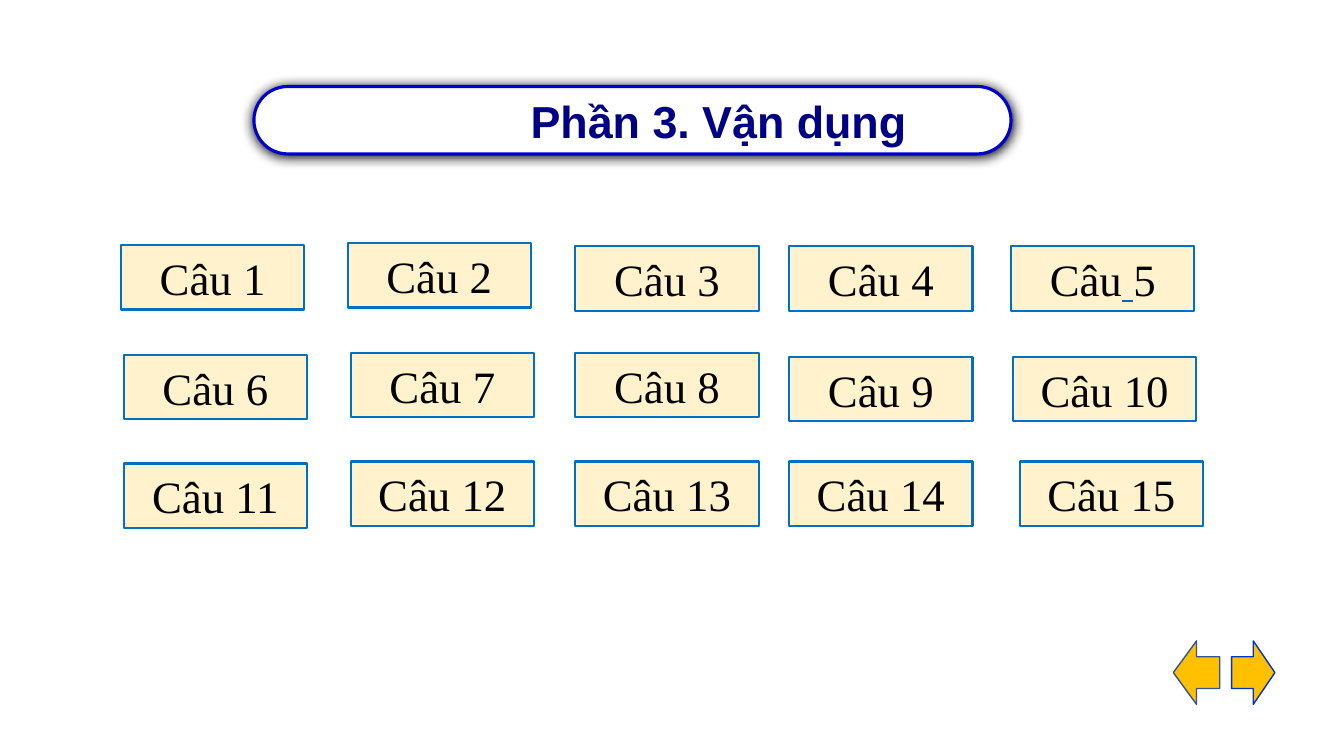
from dataclasses import dataclass

from lxml.etree import SubElement
from pptx import Presentation
from pptx.dml.color import RGBColor
from pptx.enum.shapes import MSO_SHAPE as Preset
from pptx.enum.text import MSO_ANCHOR as Anchor, MSO_AUTO_SIZE as AutoSize, PP_ALIGN as Align
from pptx.oxml.ns import qn
from pptx.util import Cm, Pt


@dataclass(frozen=True)
class Theme:
    white: str = "FFFFFF"
    title_text: str = "000086"
    title_line: str = "0000CC"
    card_fill: str = "FFF2CC"
    card_line: str = "0070C0"
    card_text: str = "000000"
    link: str = "0563C1"
    arrow_fill: str = "FFC000"
    back_line: str = "325491"
    next_line: str = "0033CC"
    shadow: str = "000000"
    title_font: str = "Arial"
    card_font: str = "Times New Roman"
    text_size: int = 32


theme = Theme()
deck = Presentation()
deck.slide_width, deck.slide_height = Cm(33.87), Cm(19.05)
page = deck.slides.add_slide(deck.slide_layouts[6])


def add_box(preset, left, top, width, height, fill, line, line_width):
    box = page.shapes.add_shape(preset, Cm(left), Cm(top), Cm(width), Cm(height))
    box.shadow.inherit = False
    box.fill.solid()
    box.fill.fore_color.rgb = RGBColor.from_string(fill)
    box.line.color.rgb = RGBColor.from_string(line)
    box.line.width = Pt(line_width)
    return box


def write(box, words, font, color, bold=False):
    frame = box.text_frame
    frame.word_wrap = True
    frame.vertical_anchor = Anchor.MIDDLE
    para = frame.paragraphs[0]
    para.alignment = Align.CENTER
    for word in words:
        span = para.add_run()
        span.text = word
        span.font.name = font
        span.font.size = Pt(theme.text_size)
        span.font.bold = bold
        span.font.color.rgb = RGBColor.from_string(color)
    return para


# Title pill, its text set right of centre
title = add_box(Preset.ROUNDED_RECTANGLE, 6.4, 2.18, 19.08, 1.7,
                theme.white, theme.title_line, 2.25)
title.adjustments[0] = 0.5
title.text_frame.margin_left = Cm(4.6)
write(title, ["Phần 3. Vận dụng"], theme.title_font, theme.title_text, bold=True)

# Soft shadow under the title
effects = title._element.spPr.find(qn("a:effectLst"))
shadow = SubElement(effects, qn("a:outerShdw"), blurRad=str(Pt(8.5)), dist=str(Pt(1)),
                    dir="5400000", algn="ctr", rotWithShape="0")
SubElement(shadow, qn("a:srgbClr"), val=theme.shadow)

# Question cards: left and top of each, row by row
card_rows = [
    [(3.05, 6.17), (8.76, 6.12), (14.5, 6.2), (19.89, 6.2), (25.48, 6.2)],
    [(3.12, 8.94), (8.84, 8.89), (14.5, 8.89), (19.89, 8.99), (25.53, 8.99)],
    [(3.12, 11.68), (8.84, 11.63), (14.5, 11.63), (19.89, 11.63), (25.7, 11.63)],
]
cards = [place for row in card_rows for place in row]
for number, (left, top) in enumerate(cards, start=1):
    card = add_box(Preset.RECTANGLE, left, top, 4.62, 1.63,
                   theme.card_fill, theme.card_line, 1.5)
    words = ["Câu", " ", "5"] if number == 5 else [f"Câu {number}"]
    para = write(card, words, theme.card_font, theme.card_text)
    card.text_frame.auto_size = AutoSize.SHAPE_TO_FIT_TEXT
    if number == 5:
        gap = para.runs[1]
        gap.font.underline = True
        gap.font.color.rgb = RGBColor.from_string(theme.link)

# Back and next arrows
add_box(Preset.LEFT_ARROW, 29.57, 16.15, 1.17, 1.6, theme.arrow_fill, theme.back_line, 1)
add_box(Preset.RIGHT_ARROW, 31.04, 16.15, 1.09, 1.6, theme.arrow_fill, theme.next_line, 1)

deck.save("out.pptx")
